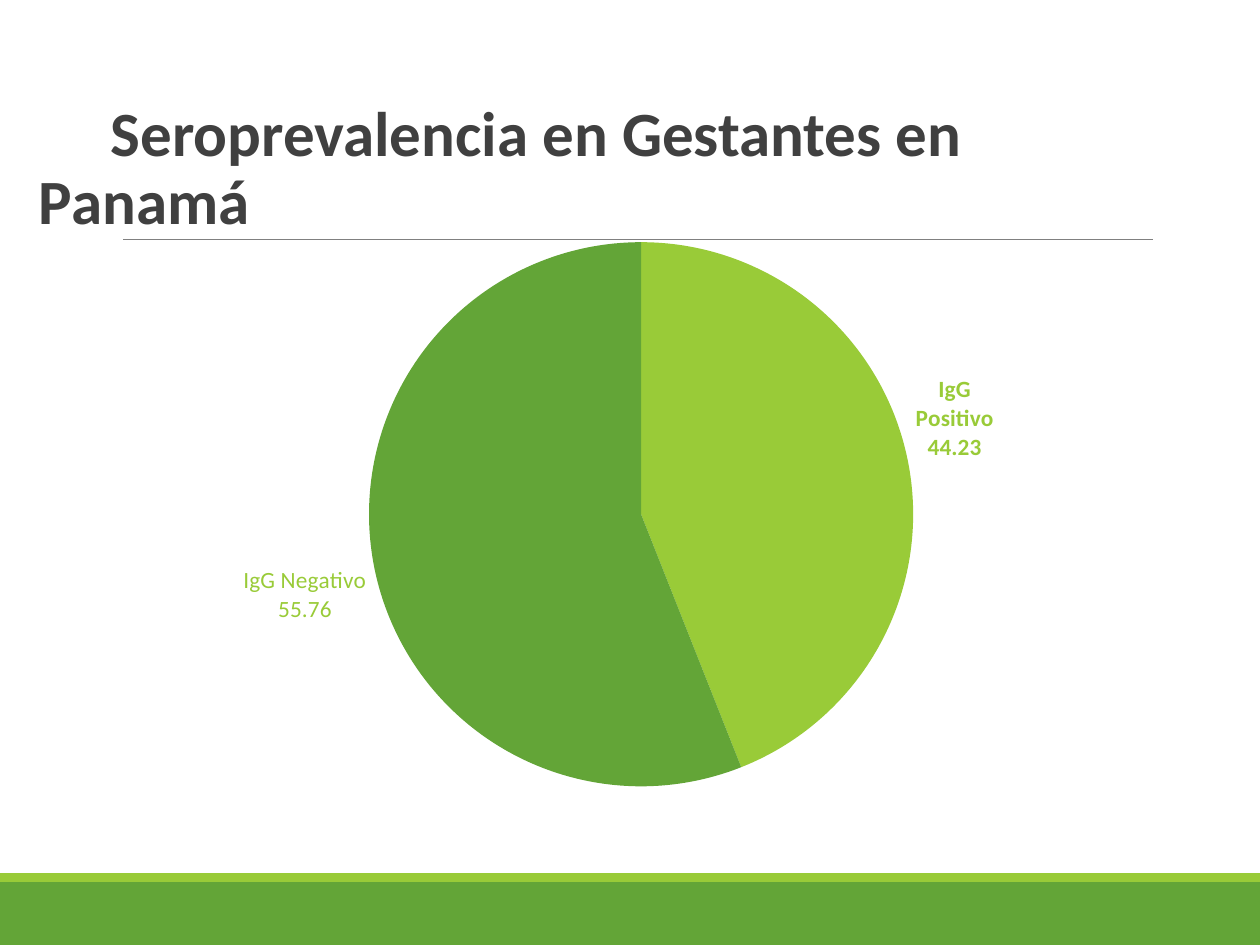
from pptx import Presentation
from pptx.chart.data import CategoryChartData
from pptx.dml.color import RGBColor
from pptx.enum.chart import XL_CHART_TYPE as ChartType, XL_LABEL_POSITION as LabelPosition
from pptx.enum.shapes import MSO_CONNECTOR as Connector, MSO_SHAPE as Shape
from pptx.oxml import parse_xml
from pptx.oxml.ns import nsdecls, qn
from pptx.util import Inches, Pt
from lxml.etree import SubElement

COLORS = {"green": "63A537", "lime": "99CB38", "rule": "808080", "title": "404040"}


class SlideBuilder:
    """Holds the style and the current slide, and draws each kind of element."""

    font_name = "Calibri"
    label_size = 13.3

    def __init__(self, page):
        self.page = page

    def color(self, name):
        return RGBColor.from_string(COLORS[name])

    def style_font(self, font, size, color, bold):
        font.name = self.font_name
        font.size = Pt(size)
        font.bold = bold
        font.color.rgb = self.color(color)

    def band(self, top, height, color):
        band = self.page.shapes.add_shape(
            Shape.RECTANGLE, 0, Inches(top), Inches(10), Inches(height))
        band.shadow.inherit = False
        band.fill.solid()
        band.fill.fore_color.rgb = self.color(color)
        band.line.fill.background()

    def rule(self, left, right, top):
        rule = self.page.shapes.add_connector(
            Connector.STRAIGHT, Inches(left), Inches(top), Inches(right), Inches(top))
        rule.line.color.rgb = self.color("rule")
        rule.line.width = Pt(0.5)
        SubElement(rule._element.spPr, qn("a:effectLst"))

    def title(self, text, left, top, width, height):
        box = self.page.shapes.add_textbox(
            Inches(left), Inches(top), Inches(width), Inches(height))
        frame = box.text_frame
        frame.word_wrap = True
        frame.margin_left = frame.margin_right = 0
        frame.margin_top = Inches(0.58)
        frame.text = text
        para = frame.paragraphs[0]
        para.line_spacing = 0.9
        para._p.get_or_add_pPr().set("indent", str(Inches(0.57)))
        self.style_font(para.runs[0].font, 36, "title", True)

    def pie(self, values, slice_colors, left, top, width, height):
        data = CategoryChartData()
        data.categories = list(values)
        data.add_series("Series 1", list(values.values()))
        chart = self.page.shapes.add_chart(
            ChartType.PIE, Inches(left), Inches(top), Inches(width), Inches(height), data).chart
        chart.has_legend = False
        chart.has_title = False
        chart.font.name = self.font_name
        chart.font.size = Pt(10)
        plot = chart.plots[0]
        plot.vary_by_categories = True
        series = plot.series[0]
        for index, name in enumerate(slice_colors):
            fill = series.points[index].format.fill
            fill.solid()
            fill.fore_color.rgb = self.color(name)
        labels = series.data_labels
        labels.show_value = False
        labels.show_category_name = True
        labels.position = LabelPosition.OUTSIDE_END
        self.style_font(labels.font, self.label_size, "lime", True)
        self.set_plot_area(chart, x=0.216, y=0.031, w=0.627, h=0.939)
        return chart

    def set_plot_area(self, chart, **fractions):
        area = chart._chartSpace.chart.plotArea
        for old in area.findall(qn("c:layout")):
            area.remove(old)
        sizes = "".join(f'<c:{key} val="{value}"/>' for key, value in fractions.items())
        area.insert(0, parse_xml(
            f'<c:layout {nsdecls("c")}><c:manualLayout><c:layoutTarget val="inner"/>'
            f'<c:xMode val="edge"/><c:yMode val="edge"/>{sizes}</c:manualLayout></c:layout>'))

    def point_label(self, chart, index, text):
        label = chart.plots[0].series[0].points[index].data_label
        label.text_frame.text = text
        label.position = LabelPosition.OUTSIDE_END
        for para in label.text_frame.paragraphs:
            for span in para.runs:
                self.style_font(span.font, self.label_size, "lime", False)


def main():
    deck = Presentation()
    deck.slide_width, deck.slide_height = Inches(10), Inches(7.5)
    builder = SlideBuilder(deck.slides.add_slide(deck.slide_layouts[6]))
    builder.band(7, 0.5, "green")
    builder.band(6.93, 0.07, "lime")
    builder.rule(0.98, 9.15, 1.9)
    builder.title("Seroprevalencia en Gestantes en Panamá", 0.31, 0.23, 8.77, 1.29)
    chart = builder.pie({"IgG Positivo 44.23": 44, "IgG Negativo": 56},
                        ["lime", "green"], 1.44, 1.78, 6.89, 4.6)
    builder.point_label(chart, 1, "IgG Negativo\n55.76")
    deck.save("out.pptx")


if __name__ == "__main__":
    main()
